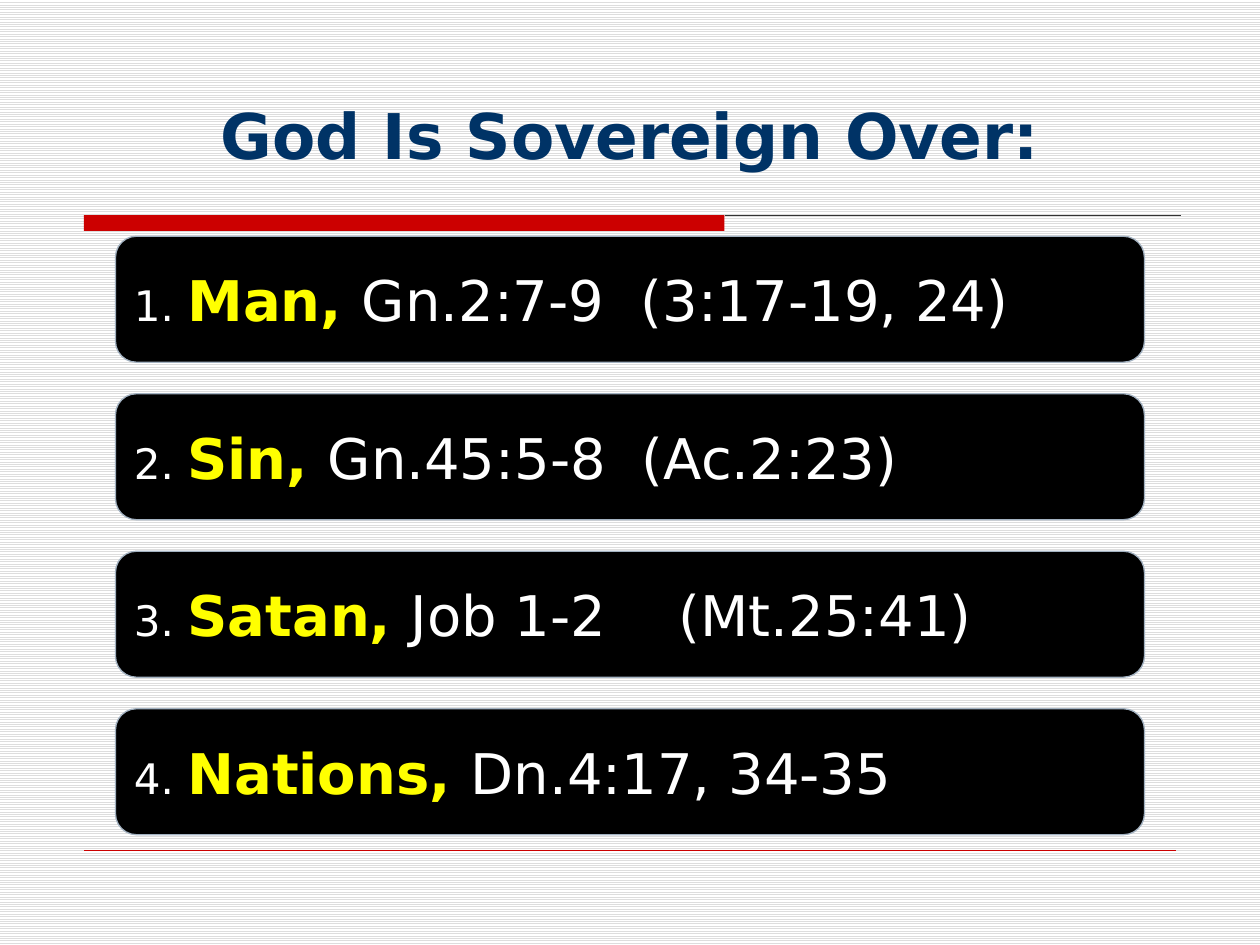
from dataclasses import dataclass

from lxml.etree import SubElement
from pptx import Presentation
from pptx.dml.color import RGBColor as Color
from pptx.enum.dml import MSO_PATTERN as Pattern
from pptx.enum.shapes import MSO_CONNECTOR as Connector, MSO_SHAPE as Shape
from pptx.enum.text import MSO_ANCHOR as Anchor, PP_ALIGN as Align
from pptx.oxml.ns import qn
from pptx.util import Pt

EMU_PER_PX = 9525


@dataclass(frozen=True)
class Theme:
    """Colours, font and type sizes of the slide."""
    font: str = "DejaVu Sans"
    title: Color = Color(0x00, 0x33, 0x66)
    accent: Color = Color(0xCC, 0x00, 0x00)
    rule: Color = Color(0x33, 0x33, 0x33)
    card: Color = Color(0x00, 0x00, 0x00)
    outline: Color = Color(0xA3, 0xB2, 0xC1)
    text: Color = Color(0xFF, 0xFF, 0xFF)
    keyword: Color = Color(0xFF, 0xFF, 0x00)
    stripe: Color = Color(0xDD, 0xDD, 0xDD)
    paper: Color = Color(0xFF, 0xFF, 0xFF)
    title_size: int = 36
    number_size: int = 24
    body_size: int = 32


THEME = Theme()
TOPICS = [
    ("Man", "Gn.2:7-9", "(3:17-19, 24)", 386),
    ("Sin", "Gn.45:5-8", "(Ac.2:23)", 387),
    ("Satan", "Job 1-2", "(Mt.25:41)", 415),
    ("Nations", "Dn.4:17, 34-35", "", 0),
]


def px(length):
    """Turn pixels into EMU."""
    return length * EMU_PER_PX


def add_run(paragraph, text, size, color, bold=False):
    """Append one formatted run to a paragraph."""
    run = paragraph.add_run()
    run.text = text
    run.font.name = THEME.font
    run.font.size = Pt(size)
    run.font.bold = bold
    run.font.color.rgb = color


def add_tab_stop(paragraph, position):
    """Give a paragraph one left tab stop."""
    properties = paragraph._p.get_or_add_pPr()
    tabs = SubElement(properties, qn("a:tabLst"))
    SubElement(tabs, qn("a:tab"), pos=str(px(position)), algn="l")


def add_rule(slide, left, top, width, color, weight):
    """Draw a horizontal line."""
    line = slide.shapes.add_connector(
        Connector.STRAIGHT, px(left), px(top), px(left + width), px(top))
    line.line.color.rgb = color
    line.line.width = Pt(weight)
    SubElement(line._element.spPr, qn("a:effectLst"))


def paint_background(slide):
    """Fill the slide with fine horizontal stripes."""
    fill = slide.background.fill
    fill.patterned()
    fill.pattern = Pattern.LIGHT_HORIZONTAL
    fill.fore_color.rgb = THEME.stripe
    fill.back_color.rgb = THEME.paper


def add_title(slide, left, top, width, height, text):
    """Place and format the title placeholder."""
    title = slide.shapes.title
    title.left, title.top = px(left), px(top)
    title.width, title.height = px(width), px(height)
    frame = title.text_frame
    frame.vertical_anchor = Anchor.BOTTOM
    paragraph = frame.paragraphs[0]
    paragraph.alignment = Align.CENTER
    add_run(paragraph, text, THEME.title_size, THEME.title, bold=True)


def add_divider(slide, left, top, width, bar_width, bar_height):
    """Draw the thick bar and the thin rule under the title."""
    bar = slide.shapes.add_shape(
        Shape.RECTANGLE, px(left), px(top), px(bar_width), px(bar_height))
    bar.shadow.inherit = False
    bar.fill.solid()
    bar.fill.fore_color.rgb = THEME.accent
    bar.line.fill.background()
    add_rule(slide, left + bar_width, top, width - bar_width, THEME.rule, 0.75)


def add_card(slide, left, top, width, height, number, topic):
    """Draw one numbered topic card."""
    keyword, passage, parallel, tab_position = topic
    card = slide.shapes.add_shape(
        Shape.ROUNDED_RECTANGLE, px(left), px(top), px(width), px(height))
    card.shadow.inherit = False
    card.fill.solid()
    card.fill.fore_color.rgb = THEME.card
    card.line.color.rgb = THEME.outline
    card.line.width = Pt(0.75)
    frame = card.text_frame
    frame.word_wrap = True
    frame.vertical_anchor = Anchor.MIDDLE
    paragraph = frame.paragraphs[0]
    paragraph.alignment = Align.LEFT
    add_run(paragraph, f"{number}. ", THEME.number_size, THEME.text)
    add_run(paragraph, f"{keyword}, ", THEME.body_size, THEME.keyword, bold=True)
    if parallel:
        add_tab_stop(paragraph, tab_position)
        passage = f"{passage}\t{parallel}"
    add_run(paragraph, passage, THEME.body_size, THEME.text)


def add_cards(slide, left, top, width, height, gap, topics):
    """Stack the topic cards with equal gaps in the given box."""
    card_height = (height - gap * (len(topics) - 1)) // len(topics)
    for index, topic in enumerate(topics):
        card_top = top + index * (card_height + gap)
        add_card(slide, left, card_top, width, card_height, index + 1, topic)


def main():
    """Build and save the presentation."""
    presentation = Presentation()
    presentation.slide_width, presentation.slide_height = px(960), px(720)
    slide = presentation.slides.add_slide(presentation.slide_layouts[5])
    paint_background(slide)
    add_divider(slide, 64, 164, 836, 488, 12)
    add_rule(slide, 64, 648, 832, THEME.accent, 0.25)
    add_title(slide, 60, 8, 840, 128, "God Is Sovereign Over:")
    add_cards(slide, 88, 180, 784, 456, 24, TOPICS)
    presentation.save("out.pptx")


if __name__ == "__main__":
    main()
